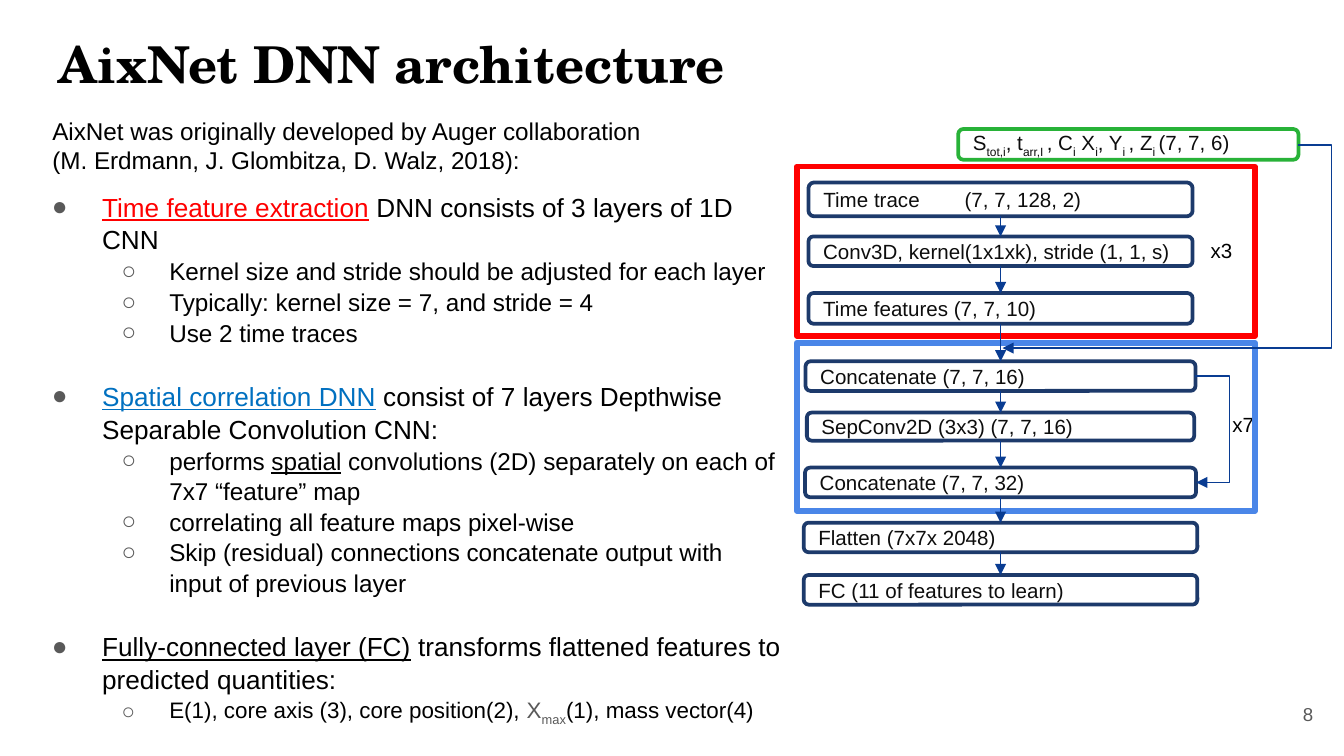
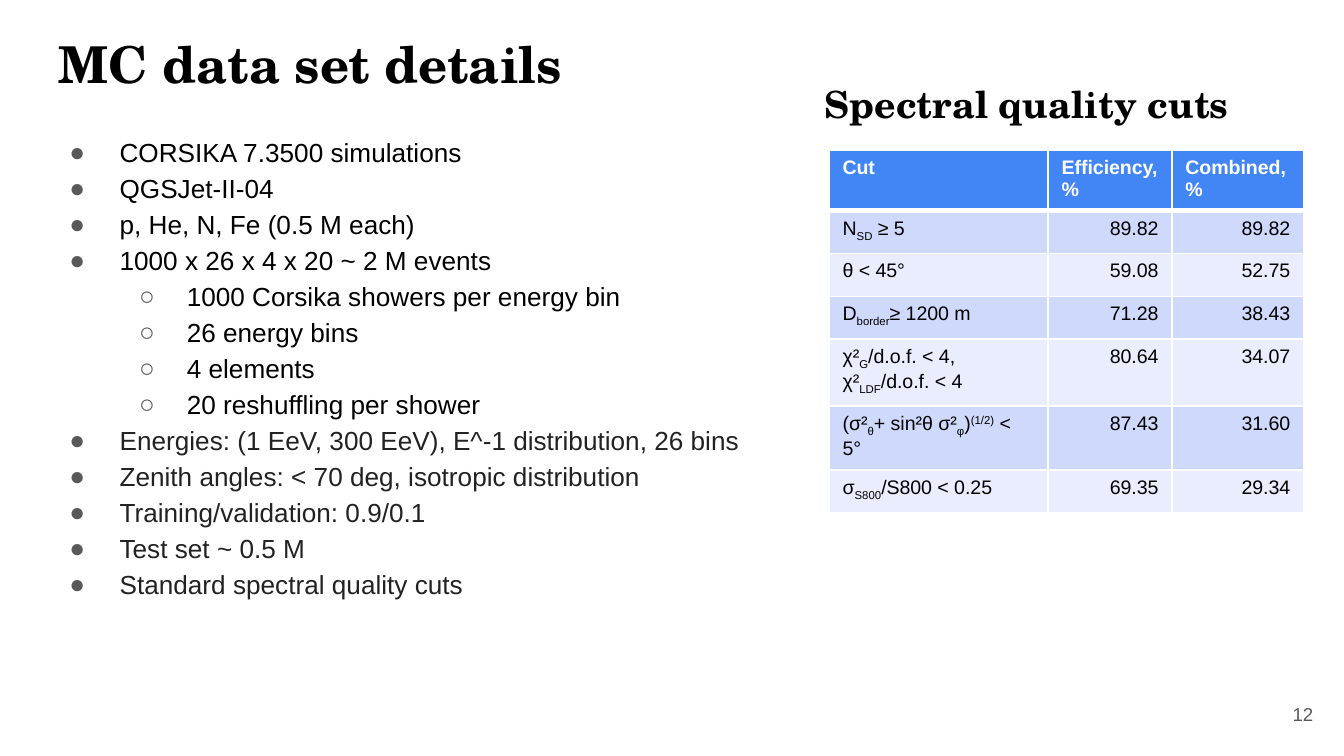
from lxml import etree
from pptx import Presentation
from pptx import util as u
from pptx.dml.color import RGBColor
from pptx.enum import shapes, text
from pptx.oxml import ns

COLORS = {
    "black": "000000", "ink": "0D0D0D", "dark": "222222", "gray": "595959", "white": "FFFFFF",
    "red": "FF0000", "link": "0070C0", "green": "28B238", "blue": "4A86E8",
    "navy": "1D3A6B", "arrow": "093C92",
    "header": "4285F4", "band": "CFD9FB", "light": "E9EDFD",
}
RGB = {name: RGBColor.from_string(value) for name, value in COLORS.items()}
HEADING = "TeX Gyre Schola"
BODY = "Arial"
LEFT, CENTER, RIGHT = text.PP_ALIGN.LEFT, text.PP_ALIGN.CENTER, text.PP_ALIGN.RIGHT


def write(paragraph, marked, size, color="black", accent=None, font=BODY):
    """Split the text at | and format pieces that start with a mark.

    _ is subscript, ^ superscript, = underlined, # accent colour only.
    """
    paragraph.font.name = font
    paragraph.font.size = u.Pt(size)
    paragraph.font.bold = font == HEADING
    paragraph.font.color.rgb = RGB[color]
    for piece in marked.split("|"):
        mark = piece[0] if piece[0] in "_^=#" else ""
        run = paragraph.add_run()
        run.text = piece[len(mark):]
        if mark == "=":
            run.font.underline = True
        if mark in ("_", "^"):
            run._r.get_or_add_rPr().set("baseline", "-25000" if mark == "_" else "30000")
        if mark and accent:
            run.font.color.rgb = RGB[accent]


def add_arrow(slide, kind, *ends):
    connector = slide.shapes.add_connector(kind, *(u.Cm(end) for end in ends))
    connector.line.color.rgb = RGB["arrow"]
    connector.line.width = u.Pt(0.75)
    line = connector.line._get_or_add_ln()
    etree.SubElement(line, ns.qn("a:tailEnd"), type="triangle")
    etree.SubElement(connector._element.spPr, ns.qn("a:effectLst"))
    return connector


# Items: level, text, size, colour, accent, space before
architecture = [
    (0, "=Time feature extraction| DNN consists of 3 layers of 1D CNN", 14, "black", "red", 0),
    (1, "Kernel size and stride should be adjusted for each layer", 13, "black", None, 0),
    (1, "Typically: kernel size = 7, and stride = 4", 13, "black", None, 0),
    (1, "Use 2 time traces", 13, "black", None, 0),
    (0, "=Spatial correlation DNN| consist of 7 layers Depthwise Separable Convolution CNN:",
     14, "black", "link", 17),
    (1, "performs |=spatial| convolutions (2D) separately on each of 7x7 “feature” map",
     13, "black", None, 0),
    (1, "correlating all feature maps pixel-wise", 13, "black", None, 0),
    (1, "Skip (residual) connections concatenate output with input of previous layer",
     13, "black", None, 0),
    (0, "=Fully-connected layer (FC)| transforms flattened features to predicted quantities:",
     14, "black", None, 17),
    (1, "E(1), core axis (3), core position(2), |#X|_max|(1), mass vector(4)",
     12, "black", "gray", 0),
]
data_set = [
    (level, item, 14, color, None, 0)
    for level, color, items in [
        (0, "black", ["CORSIKA 7.3500 simulations", "QGSJet-II-04", "p, He, N, Fe (0.5 M each)",
                      "1000 x 26 x 4 x 20 ~ 2 M events"]),
        (1, "black", ["1000 Corsika showers per energy bin", "26 energy bins", "4 elements",
                      "20 reshuffling per shower"]),
        (0, "dark", ["Energies: (1 EeV, 300 EeV), E^-1 distribution, 26 bins",
                     "Zenith angles: < 70 deg, isotropic distribution",
                     "Training/validation: 0.9/0.1", "Test set ~ 0.5 M",
                     "Standard spectral quality cuts"]),
    ]
    for item in items
]
page_place = (23.55, 12.95, 1.52, 1.09)
# Labels: place, text, size, colour, font, alignment
architecture_labels = [
    (page_place, "8", 10, "gray", BODY, RIGHT),
    ((0.74, 2.06, 12, 1.37),
     "AixNet was originally developed by Auger collaboration "
     "(M. Erdmann, J. Glombitza, D. Walz, 2018):", 13, "black", BODY, LEFT),
    ((22.4, 4.37, 1.37, 0.74), "x3", 11, "black", BODY, CENTER),
    ((22.81, 7.65, 1.37, 0.74), "x7", 11, "black", BODY, CENTER),
]
data_set_labels = [
    (page_place, "12", 10, "gray", BODY, RIGHT),
    ((15.34, 1.4, 9.65, 1.12), "Spectral quality cuts", 20, "black", HEADING, LEFT),
]

prs = Presentation()
prs.slide_width, prs.slide_height = u.Cm(25.4), u.Cm(14.29)

for title, body_place, spacing, items, labels in [
    ("AixNet DNN architecture", (0.41, 3.33, 14.6, 10.9), 1.05, architecture, architecture_labels),
    ("MC data set details", (0.74, 2.24, 14.6, 11.02), 1.15, data_set, data_set_labels),
]:
    slide = prs.slides.add_slide(prs.slide_layouts[1])
    heading, body = slide.placeholders
    for holder, place in [(heading, (0.86, 0.36, 23.67, 1.6)), (body, body_place)]:
        holder.left, holder.top, holder.width, holder.height = (u.Cm(v) for v in place)
        frame = holder.text_frame
        frame.auto_size = text.MSO_AUTO_SIZE.NONE
        frame.vertical_anchor = text.MSO_ANCHOR.TOP
        frame.margin_left = frame.margin_right = u.Cm(0.25)
        frame.margin_top = frame.margin_bottom = u.Cm(0.25)
    title_line = heading.text_frame.paragraphs[0]
    title_line.alignment = LEFT
    write(title_line, title, 27.2, font=HEADING)

    for number, (level, item, size, color, accent, gap) in enumerate(items):
        frame = body.text_frame
        paragraph = frame.add_paragraph() if number else frame.paragraphs[0]
        paragraph.level = level
        paragraph.line_spacing = spacing
        paragraph.space_before = u.Pt(gap)
        properties = paragraph._p.get_or_add_pPr()
        properties.set("marL", str(u.Cm(1.27 * (level + 1))))
        properties.set("indent", str(u.Cm((-0.95, -0.9)[level])))
        bullet_color = etree.SubElement(properties, ns.qn("a:buClr"))
        etree.SubElement(bullet_color, ns.qn("a:srgbClr"), val=COLORS["gray"])
        etree.SubElement(properties, ns.qn("a:buFont"), typeface=BODY)
        etree.SubElement(properties, ns.qn("a:buChar"), char="●○"[level])
        write(paragraph, item, size, color, accent)

    for place, label, size, color, font, alignment in labels:
        frame = slide.shapes.add_textbox(*(u.Cm(v) for v in place)).text_frame
        frame.word_wrap = True
        frame.vertical_anchor = text.MSO_ANCHOR.MIDDLE
        frame.paragraphs[0].alignment = alignment
        write(frame.paragraphs[0], label, size, color, font=font)

network_slide, cuts_slide = prs.slides

# Network diagram: the layers share one vertical axis
AXIS = 18.91
layers = [
    (AXIS - width / 2, top, width, height, "navy", label)
    for top, width, height, label in [
        (3.45, 7.26, 0.64, "Time trace\t(7, 7, 128, 2)"),
        (4.47, 7.26, 0.56, "Conv3D, kernel(1x1xk), stride (1, 1, s)"),
        (5.54, 7.26, 0.58, "Time features (7, 7, 10)"),
        (6.83, 7.37, 0.56, "Concatenate (7, 7, 16)"),
        (7.8, 7.32, 0.53, "SepConv2D (3x3) (7, 7, 16)"),
        (8.84, 7.39, 0.56, "Concatenate (7, 7, 32)"),
        (9.88, 7.44, 0.56, "Flatten (7x7x 2048)"),
        (10.87, 7.44, 0.56, "FC (11 of features to learn)"),
    ]
]
blocks = [
    (15.06, 6.48, 8.66, 3.18, "blue", ""),
    (15.06, 3.15, 8.66, 3.2, "red", ""),
    (18.11, 2.44, 6.43, 0.58, "green",
     "S|_tot,i|, t|_arr,I |, C|_i| X|_i|, Y|_i |, Z|_i |(7, 7, 6)"),
]
chain = []
for left, top, width, height, color, label in blocks + layers:
    kind = shapes.MSO_SHAPE.ROUNDED_RECTANGLE if label else shapes.MSO_SHAPE.RECTANGLE
    block = network_slide.shapes.add_shape(kind, u.Cm(left), u.Cm(top), u.Cm(width), u.Cm(height))
    block.shadow.inherit = False
    block.fill.background()
    block.line.color.rgb = RGB[color]
    block.line.width = u.Pt(2 if label else 3)
    if label:
        frame = block.text_frame
        frame.margin_top = frame.margin_bottom = 0
        frame.vertical_anchor = text.MSO_ANCHOR.MIDDLE
        paragraph = frame.paragraphs[0]
        paragraph.alignment = LEFT
        if "\t" in label:
            tabs = etree.SubElement(paragraph._p.get_or_add_pPr(), ns.qn("a:tabLst"))
            etree.SubElement(tabs, ns.qn("a:tab"), pos=str(u.Cm(2.67)), algn="l")
        write(paragraph, label, 11, "ink")
    if color == "navy":
        chain.append(block)

for upper, lower in zip(chain, chain[1:]):
    arrow = add_arrow(network_slide, shapes.MSO_CONNECTOR.STRAIGHT, 0, 0, 0, 0)
    arrow.begin_connect(upper, 2)
    arrow.end_connect(lower, 0)

for x1, y1, x2, y2, turn in [(24.54, 2.74, 18.95, 6.58, 25.17), (22.58, 7.11, 22.61, 9.12, 23.24)]:
    skip = add_arrow(network_slide, shapes.MSO_CONNECTOR.ELBOW, x1, y1, x2, y2)
    bend = round((turn - x1) / (x2 - x1) * 100000)
    guides = skip._element.spPr.find(ns.qn("a:prstGeom")).get_or_add_avLst()
    etree.SubElement(guides, ns.qn("a:gd"), name="adj1", fmla=f"val {bend}")

# Table of cuts
cuts = [
    ("Cut", "Efficiency, %", "Combined, %"),
    ("N|_SD| ≥ 5", "89.82", "89.82"),
    ("θ < 45°", "59.08", "52.75"),
    ("D|_border|≥ 1200 m", "71.28", "38.43"),
    ("χ²|_G|/d.o.f. < 4, χ²|_LDF|/d.o.f. < 4", "80.64", "34.07"),
    ("(σ²|_θ|+ sin²θ σ²|_φ|)|^(1/2)| < 5°", "87.43", "31.60"),
    ("σ|_S800|/S800 < 0.25", "69.35", "29.34"),
]
table = cuts_slide.shapes.add_table(
    len(cuts), 3, u.Cm(15.67), u.Cm(2.84), u.Cm(8.97), u.Cm(0.81 * len(cuts))).table
for column, width in zip(table.columns, (4.14, 2.34, 2.49)):
    column.width = u.Cm(width)
for row, values in enumerate(cuts):
    for col, value in enumerate(values):
        cell = table.cell(row, col)
        properties = cell._tc.get_or_add_tcPr()
        for side in "LRTB":
            thick = (side == "B" and row == 0) or (side == "T" and row == 1)
            border = etree.SubElement(
                properties, ns.qn(f"a:ln{side}"), w=str(u.Pt(3 if thick else 1)))
            paint = etree.SubElement(border, ns.qn("a:solidFill"))
            etree.SubElement(paint, ns.qn("a:srgbClr"), val=COLORS["white"])
        cell.fill.solid()
        cell.fill.fore_color.rgb = RGB["header" if row == 0 else ("light", "band")[row % 2]]
        paragraph = cell.text_frame.paragraphs[0]
        paragraph.alignment = RIGHT if row and col else LEFT
        write(paragraph, value, 10.5, "black" if row else "white")
        paragraph.font.bold = row == 0

prs.save("out.pptx")
